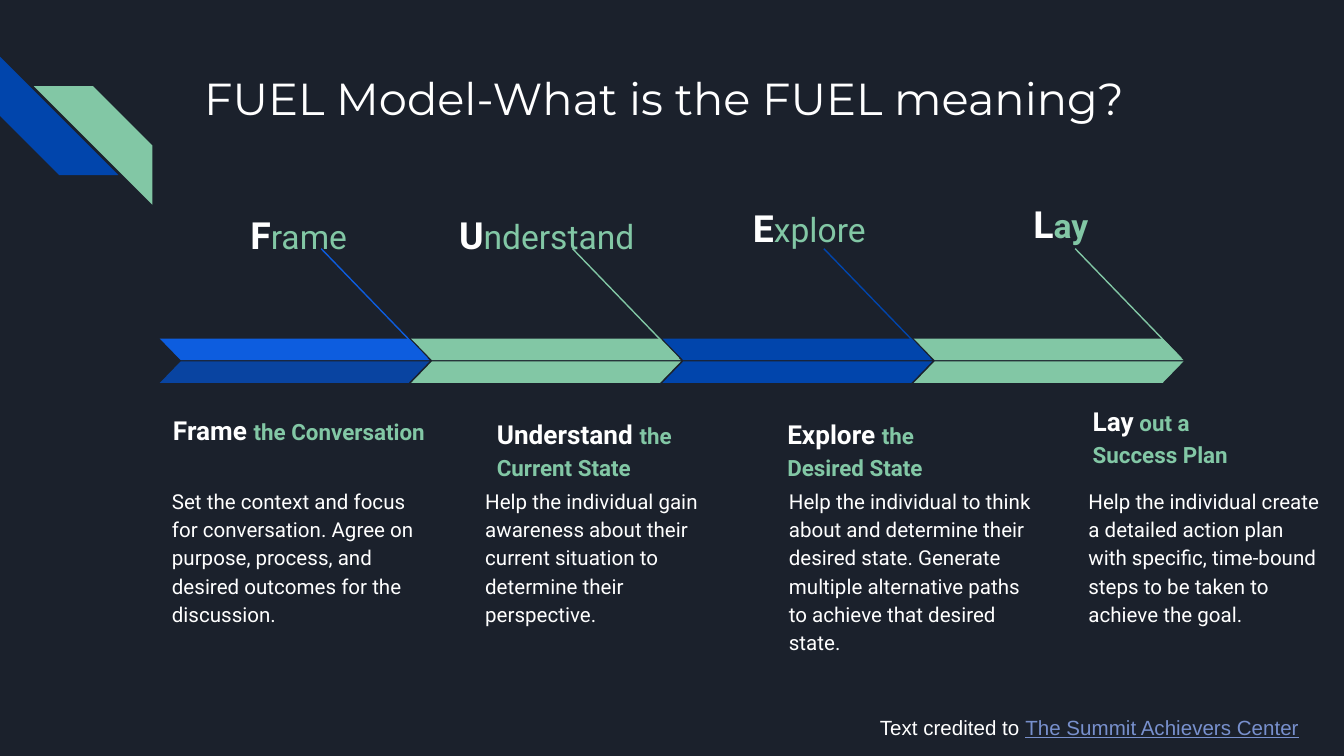
import pptx
import pptx.util
import pptx.dml.color
import pptx.enum.shapes
import pptx.enum.text
import pptx.oxml
import pptx.oxml.ns
from dataclasses import dataclass

Cm, Pt = pptx.util.Cm, pptx.util.Pt
SHAPE = pptx.enum.shapes.MSO_SHAPE
ALIGN = pptx.enum.text.PP_ALIGN
ANCHOR = pptx.enum.text.MSO_ANCHOR


@dataclass(frozen=True)
class Theme:
    background: str = "1B212C"
    text: str = "FFFFFF"
    green: str = "82C7A5"
    blue: str = "0145AC"
    bright_blue: str = "0D5DDF"
    deep_blue: str = "0944A1"
    link: str = "7890CD"
    title_font: str = "Montserrat"
    body_font: str = "Roboto"
    credit_font: str = "Arial"
    title_size: int = 24
    initial_size: int = 20
    label_size: int = 18
    lead_size: int = 14
    heading_size: int = 12
    body_size: int = 11


THEME = Theme()

# Content: boxes are left, top, width, height in cm
TITLE = "FUEL Model-What is the FUEL meaning?"
CREDIT = ("Text credited to ", "The Summit Achievers Center")
STAGES = [
    dict(label=("F", "rame"), label_box=(4.32, 3.63, 2.49, 0.66),
         heading=("Frame ", "the Conversation"), heading_box=(3.02, 7.44, 6.1, 1.24),
         detail="Set the context and focus for conversation. Agree on purpose, "
                "process, and desired outcomes for the discussion.",
         detail_box=(3.0, 8.92, 5.13, 2.06),
         upper=THEME.bright_blue, lower=THEME.deep_blue),
    dict(label=("U", "nderstand"), label_box=(8.38, 3.63, 3.86, 0.66),
         heading=("Understand ", "the Current State"), heading_box=(9.14, 8.1, 4.93, 1.24),
         detail="Help the individual gain awareness about their current situation "
                "to determine their perspective.",
         detail_box=(8.92, 8.92, 5.13, 2.06),
         upper=THEME.green, lower=THEME.green),
    dict(label=("E", "xplore"), label_box=(13.54, 3.51, 3.07, 0.66),
         heading=("Explore ", "the Desired State"), heading_box=(14.63, 8.1, 3.86, 1.24),
         detail="Help the individual to think about and determine their desired "
                "state. Generate multiple alternative paths to achieve that desired state.",
         detail_box=(14.66, 8.92, 5.13, 3.05),
         upper=THEME.blue, lower=THEME.blue),
    dict(label=("L", "ay"), label_box=(19.28, 3.43, 1.73, 0.66),
         label_align=ALIGN.LEFT, label_bold=True,
         heading=("Lay", " out a Success Plan"), heading_box=(20.4, 7.85, 3.86, 1.24),
         detail="Help the individual create a detailed action plan with specific, "
                "time-bound steps to be taken to achieve the goal.",
         detail_box=(20.32, 8.92, 4.93, 2.06),
         upper=THEME.green, lower=THEME.green),
]

# Arrow geometry in cm
STAGE_PITCH = 4.75
BAR_LEFT, BAR_WIDTH, BAR_HEIGHT = 3.02, 5.1, 0.41
UPPER_TOP, LOWER_TOP = 6.4, 6.83
POINTER_LEFT, POINTER_TOP, POINTER_WIDTH, POINTER_BOTTOM = 6.07, 4.7, 2.0, 6.77


def rgb(color):
    return pptx.dml.color.RGBColor.from_string(color)


def place(box):
    return [Cm(value) for value in box]


def style(font, size, color, name=None, bold=None):
    font.size = Pt(size)
    font.color.rgb = rgb(color)
    if name:
        font.name = name
    if bold is not None:
        font.bold = bold


def prepare(frame, anchor=ANCHOR.TOP):
    frame.word_wrap = True
    frame.vertical_anchor = anchor
    frame.margin_left = frame.margin_right = Cm(0.25)
    frame.margin_top = frame.margin_bottom = Cm(0.25)
    return frame.paragraphs[0]


def add_text(slide, box, runs, font_name, align=ALIGN.LEFT,
             anchor=ANCHOR.TOP, spacing=1.15):
    """Each run is (text, size, color, bold)."""
    paragraph = prepare(slide.shapes.add_textbox(*place(box)).text_frame, anchor)
    paragraph.alignment = align
    paragraph.line_spacing = spacing
    paragraph.font.name = font_name
    for text, size, color, bold in runs:
        run = paragraph.add_run()
        run.text = text
        style(run.font, size, color, font_name, bold)
    return paragraph


def add_block(slide, kind, box, color, adjustment, flip=False, rotation=0):
    block = slide.shapes.add_shape(kind, *place(box))
    block.adjustments[0] = adjustment
    block.rotation = rotation
    block.shadow.inherit = False
    block.fill.solid()
    block.fill.fore_color.rgb = rgb(color)
    block.line.fill.background()
    if flip:
        block._element.spPr.xfrm.set("flipH", "1")


def add_pointer(slide, left, color):
    pointer = slide.shapes.add_connector(
        pptx.enum.shapes.MSO_CONNECTOR.STRAIGHT,
        *place((left, POINTER_TOP, left + POINTER_WIDTH, POINTER_BOTTOM)))
    pointer.line.color.rgb = rgb(color)
    pointer.line.width = Pt(0.75)
    pointer._element.spPr.append(
        pptx.oxml.parse_xml("<a:effectLst %s/>" % pptx.oxml.ns.nsdecls("a")))


def add_stage(slide, index, stage):
    offset = index * STAGE_PITCH
    # Label, heading and detail
    initial, rest = stage["label"]
    add_text(slide, stage["label_box"],
             [(initial, THEME.initial_size, THEME.text, True),
              (rest, THEME.label_size, THEME.green, stage.get("label_bold", False))],
             THEME.body_font, stage.get("label_align", ALIGN.RIGHT))
    lead, rest = stage["heading"]
    add_text(slide, stage["heading_box"],
             [(lead, THEME.lead_size, THEME.text, True),
              (rest, THEME.heading_size, THEME.green, True)],
             THEME.body_font, anchor=ANCHOR.BOTTOM)
    add_text(slide, stage["detail_box"],
             [(stage["detail"], THEME.body_size, THEME.text, False)], THEME.body_font)
    # Pointer and the two halves of the arrow
    add_pointer(slide, POINTER_LEFT + offset, stage["upper"])
    for top, color, flip in ((UPPER_TOP, stage["upper"], True),
                             (LOWER_TOP, stage["lower"], False)):
        add_block(slide, SHAPE.PARALLELOGRAM,
                  (BAR_LEFT + offset, top, BAR_WIDTH, BAR_HEIGHT), color, 0.97, flip)


def main():
    deck = pptx.Presentation()
    deck.slide_width, deck.slide_height = Cm(25.4), Cm(14.29)
    slide = deck.slides.add_slide(deck.slide_layouts[5])
    slide.background.fill.solid()
    slide.background.fill.fore_color.rgb = rgb(THEME.background)

    # Corner stripes
    add_block(slide, SHAPE.DIAGONAL_STRIPE, (0, 1.07, 2.24, 2.24), THEME.blue, 0.5,
              rotation=270)
    add_block(slide, SHAPE.DIAGONAL_STRIPE, (0.64, 1.63, 2.24, 2.24), THEME.green, 0.5,
              flip=True)

    # Title
    title = slide.shapes.title
    title.left, title.top, title.width, title.height = place((3.61, 1.09, 19.56, 2.54))
    heading = prepare(title.text_frame)
    heading.text = TITLE
    heading.alignment = ALIGN.LEFT
    style(heading.font, THEME.title_size, THEME.text, THEME.title_font)

    # Stages
    for index, stage in enumerate(STAGES):
        add_stage(slide, index, stage)

    # Credit
    credit = add_text(slide, (16.38, 13.28, 9.02, 1.0),
                      [(CREDIT[0], THEME.body_size, THEME.text, False),
                       (CREDIT[1], THEME.body_size, THEME.link, False)],
                      THEME.credit_font, spacing=1.0)
    credit.runs[1].font.underline = True

    deck.save("out.pptx")


if __name__ == "__main__":
    main()
